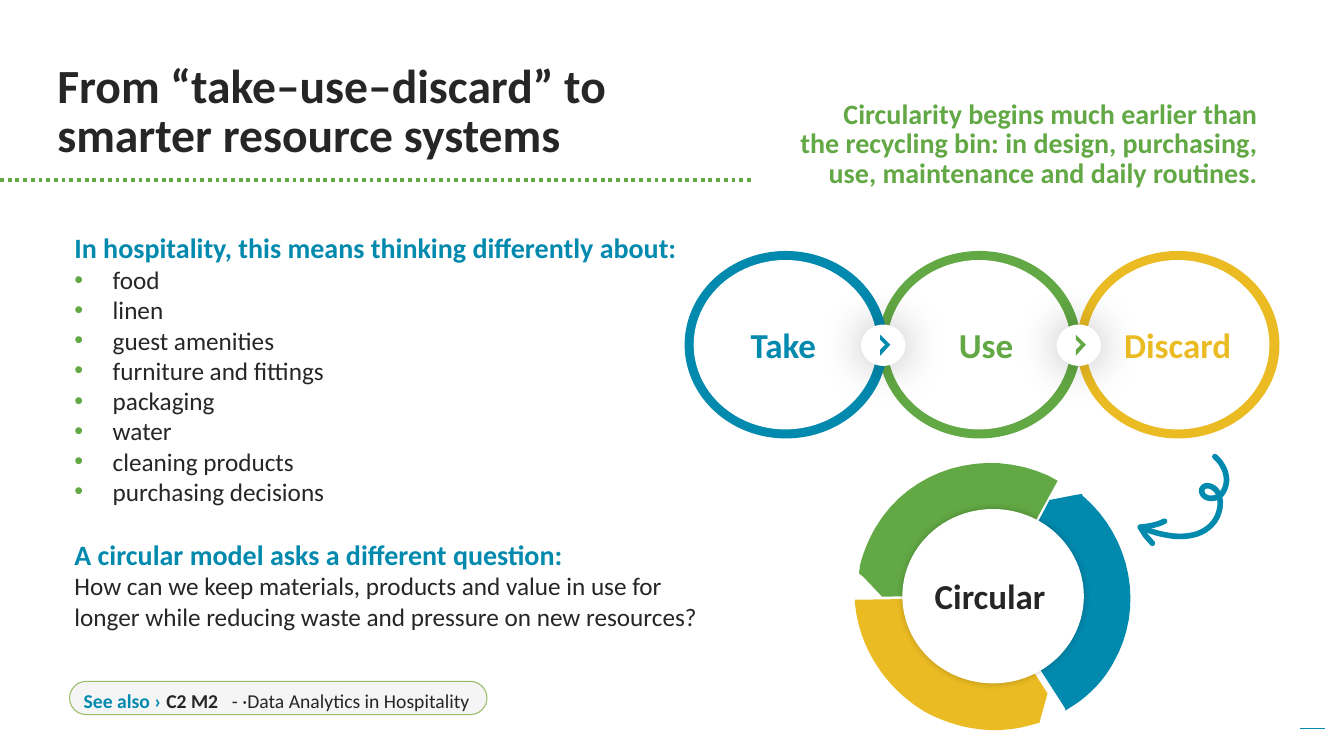
from lxml.etree import SubElement
from pptx import Presentation
from pptx.dml.color import RGBColor
from pptx.enum.dml import MSO_LINE
from pptx.enum.shapes import MSO_CONNECTOR, MSO_SHAPE
from pptx.enum.text import MSO_ANCHOR, PP_ALIGN
from pptx.oxml.ns import qn
from pptx.util import Emu, Inches, Pt

TEAL = RGBColor(0x02, 0x89, 0xAE)
GREEN = RGBColor(0x62, 0xA8, 0x44)
YELLOW = RGBColor(0xEA, 0xBB, 0x22)
INK = RGBColor(0x26, 0x26, 0x26)
WHITE = RGBColor(0xFF, 0xFF, 0xFF)
PALE = RGBColor(0xF5, 0xF5, 0xF5)
SAGE = RGBColor(0x97, 0xBC, 0x62)
SLIDE_W, SLIDE_H = Inches(13.33), Inches(7.5)
COLS, ROWS = 133.3, 75
CELL = SLIDE_H / ROWS
FONT = "Calibri"
TOPICS = ["food", "linen", "guest amenities", "furniture and fittings",
          "packaging", "water", "cleaning products", "purchasing decisions"]

GREEN_ARC = [(19.9, 1.7), (16.6, 7.7), (15.6, 7.2, 14.5, 6.9, 13.3, 6.9),
             (9.8, 6.9, 7, 9.7, 7, 13.1), (2.5, 13.2), (0.6, 11.2),
             (0.2, 10.9), (0.3, 10.1), (0.6, 8.9, 1.1, 7.6, 1.8, 6.4),
             (5.2, 0.5, 12.7, -1.7, 19, 1.2)]
TEAL_ARC = [(22.3, 3), (22.4, 3.2), (27.2, 7.3, 28.6, 14.3, 25.4, 19.8),
            (24.3, 21.8, 22.7, 23.3, 20.8, 24.4), (20.7, 24.5), (20.6, 24.2),
            (17, 18.6), (18.9, 17.5, 20.2, 15.3, 20.1, 12.9),
            (20, 10.7, 18.8, 8.8, 17, 7.6), (19.1, 3.6), (21.7, 3.1)]
YELLOW_ARC = [(6.8, 13.4), (7, 16.8, 10.1, 19.6, 13.6, 19.6),
              (14.6, 19.6, 15.5, 19.3, 16.4, 18.9), (18.9, 22.8),
              (18.2, 25.3), (18.1, 25.7), (17, 26),
              (13.7, 26.9, 10, 26.4, 6.7, 24.6),
              (2.7, 22.2, 0.2, 18.1, -0.2, 13.9), (-0.2, 13.5), (0.1, 13.5)]
CHEVRON = [(0, 0), (1, 1), (0, 2.1), (0, 1.5), (0.5, 1), (0, 0.5)]
CURL = [(7.5, 0.3), (8.8, 1.5, 9, 3, 8.1, 4.1), (7.5, 4.6, 6.4, 4.6, 6.2, 3.8),
        (6.1, 3.2, 6.9, 2.9, 7.6, 3.6), (8.2, 4.3, 8.2, 5.7, 7.4, 6.8),
        (6, 8.6, 3.2, 8.6, 0.1, 7.3)]
CURL_HEAD = [(2.5, 6.7), (1.7, 7.1, 1, 7.2, 0.1, 7.3), (0.6, 8.1), (1.3, 8.9)]


def emu(*cells):
    """Turn grid cells into slide lengths."""
    return [Emu(int(c * CELL)) for c in cells]


def add_para(tf, text, first=False, size=18, color=INK, bold=False,
             align=PP_ALIGN.LEFT, line=None, before=0, bullet=False):
    """Write one formatted paragraph."""
    p = tf.paragraphs[0] if first else tf.add_paragraph()
    p.alignment = align
    if line:
        p.line_spacing = Pt(line)
    if before:
        p.space_before = Pt(before)
    if bullet:
        pPr = p._p.get_or_add_pPr()
        pPr.set("marL", str(Inches(0.38)))
        pPr.set("indent", str(-Inches(0.38)))
        clr = SubElement(SubElement(pPr, qn("a:buClr")), qn("a:srgbClr"))
        clr.set("val", str(GREEN))
        SubElement(pPr, qn("a:buFont")).set("typeface", "Arial")
        SubElement(pPr, qn("a:buChar")).set("char", "•")
    r = p.add_run()
    r.text = text
    r.font.name, r.font.size, r.font.bold = FONT, Pt(size), bold
    r.font.color.rgb = color


def add_text(slide, box, text, tight=False, **fmt):
    """Add a text box; tight ones have no margins and are centred vertically."""
    tf = slide.shapes.add_textbox(*emu(*box)).text_frame
    tf.word_wrap = True
    if tight:
        tf.margin_left = tf.margin_right = tf.margin_top = tf.margin_bottom = 0
        tf.vertical_anchor = MSO_ANCHOR.MIDDLE
    add_para(tf, text, first=True, **fmt)
    return tf


def add_shape(slide, kind, box, fill, glow=None):
    """Add a plain filled shape, with a soft shadow of (opacity, blur) if given."""
    s = slide.shapes.add_shape(kind, *emu(*box))
    s.shadow.inherit = False
    s.fill.solid()
    s.fill.fore_color.rgb = fill
    s.line.fill.background()
    if glow:
        opacity, blur = glow
        effects = s._element.spPr.find(qn("a:effectLst"))
        shadow = SubElement(effects, qn("a:outerShdw"), blurRad=str(Pt(blur)))
        clr = SubElement(shadow, qn("a:srgbClr"), val="000000")
        SubElement(clr, qn("a:alpha"), val=str(opacity * 1000))
    return s


def add_line(slide, start, end, color, width):
    """Add a straight line without a shadow."""
    s = slide.shapes.add_connector(MSO_CONNECTOR.STRAIGHT, *emu(*start, *end))
    s.line.color.rgb, s.line.width = color, Pt(width)
    SubElement(s._element.spPr, qn("a:effectLst"))
    return s


def trace(outline, steps=16):
    """Turn corners and cubic curve segments into a list of points."""
    points = [outline[0]]
    for seg in outline[1:]:
        if len(seg) == 2:
            points.append(seg)
            continue
        nodes = [points[-1], seg[:2], seg[2:4], seg[4:]]
        for t in (i / steps for i in range(1, steps + 1)):
            weights = ((1 - t) ** 3, 3 * t * (1 - t) ** 2, 3 * t * t * (1 - t), t ** 3)
            points.append(tuple(sum(w * n[k] for w, n in zip(weights, nodes))
                                for k in (0, 1)))
    return points


def add_outline(slide, x, y, outline, color, stroke=None):
    """Draw an outline placed from (x, y): filled, or open if stroke is given."""
    pts = [(100 * (x + px), 100 * (y + py)) for px, py in trace(outline)]
    builder = slide.shapes.build_freeform(*pts[0], scale=CELL / 100)
    builder.add_line_segments(pts[1:], close=not stroke)
    s = builder.convert_to_shape()
    s.shadow.inherit = False
    if stroke:
        s.fill.background()
        s.line.color.rgb, s.line.width = color, Pt(stroke)
        s.line._get_or_add_ln().set("cap", "rnd")
        SubElement(s.line._get_or_add_ln(), qn("a:round"))
    else:
        s.fill.solid()
        s.fill.fore_color.rgb = color
        s.line.fill.background()


def add_header(slide, x, y):
    """Place the title, its dotted rule and the statement on the right."""
    add_text(slide, (x + 4.7, y, 69.1, 12.2), size=34, bold=True, line=35.2,
             text="From “take–use–discard” to smarter resource systems")
    rule = add_line(slide, (x, y + 12.1), (x + 74.8, y + 12.1), GREEN, 2.75)
    rule.line.dash_style = MSO_LINE.ROUND_DOT
    s = add_shape(slide, MSO_SHAPE.RECTANGLE, (x + 74.8, y + 3.7, 50.9, 9.8), WHITE)
    tf = s.text_frame
    tf.word_wrap, tf.vertical_anchor = True, MSO_ANCHOR.TOP
    fmt = dict(size=20, color=GREEN, bold=True, align=PP_ALIGN.RIGHT, line=21)
    add_para(tf, "Circularity begins much earlier than", first=True, **fmt)
    add_para(tf, "the recycling bin: in design, purchasing, use, "
             "maintenance and daily routines.", **fmt)


def add_body(slide, box):
    """Place the list of topics and the closing question."""
    head = dict(size=20, color=TEAL, bold=True)
    tf = add_text(slide, box, "In hospitality, this means thinking differently about:", **head)
    for topic in TOPICS:
        add_para(tf, topic, bullet=True)
    add_para(tf, "A circular model asks a different question:", before=22, **head)
    add_para(tf, "How can we keep materials, products and value in use for longer "
             "while reducing waste and pressure on new resources?")


def add_label(slide, x, y, text, color):
    """Place a centred diagram label."""
    add_text(slide, (x, y, 19, 3.7), text, tight=True, size=25, color=color,
             bold=True, align=PP_ALIGN.CENTER, line=25.8)


def add_chain(slide, x, y):
    """Place the three linked rings with chevron badges."""
    rings = [(0, 0.3, "Take", TEAL), (19.2, 20.4, "Use", GREEN),
             (38.9, 39.4, "Discard", YELLOW)]
    for dx, _, _, color in reversed(rings):
        add_shape(slide, MSO_SHAPE.OVAL, (x + dx, y, 20.1, 18.6), color)
        add_shape(slide, MSO_SHAPE.OVAL, (x + dx + 0.9, y + 0.9, 18.2, 16.8), WHITE)
    for dx, color in ((17.5, TEAL), (36.9, GREEN)):
        add_shape(slide, MSO_SHAPE.OVAL, (x + dx, y + 7.3, 4.4, 4.1), WHITE, glow=(29, 32))
        add_outline(slide, x + dx + 1.9, y + 8.3, CHEVRON, color)
    for _, dx, text, color in rings:
        add_label(slide, x + dx, y + 7.7, text, color)


def add_cycle(slide, x, y):
    """Place the circular arrow ring and the curled arrow leading to it."""
    for part in (CURL, CURL_HEAD):
        add_outline(slide, x + 28, y - 1, part, TEAL, stroke=4)
    for arc, color in ((GREEN_ARC, GREEN), (TEAL_ARC, TEAL), (YELLOW_ARC, YELLOW)):
        add_outline(slide, x, y, arc, color)
    add_shape(slide, MSO_SHAPE.OVAL, (x + 4.5, y + 4.5, 18, 17.3), WHITE, glow=(20, 5))
    add_label(slide, x + 3.7, y + 11.5, "Circular", INK)


def add_footer(slide, x, y):
    """Place the reference pill and the corner mark."""
    s = add_shape(slide, MSO_SHAPE.ROUNDED_RECTANGLE, (x, y, 41.4, 3.3), PALE)
    s.adjustments[0] = 0.5
    s.line.color.rgb, s.line.width = SAGE, Pt(0.75)
    for dx, w, text, color, bold in (
            (1.4, 8.3, "See also ›", TEAL, True), (9.6, 6.7, "C2 M2", INK, True),
            (16.1, 38.2, "- ·Data Analytics in Hospitality", INK, False)):
        add_text(slide, (x + dx, y + 0.7, w, 2.4), text, tight=True, size=14,
                 color=color, bold=bold)
    add_line(slide, (COLS - 1.9, y + 4.7), (COLS - 4.4, y + 4.7), TEAL, 0.75)


def main():
    """Build and save the slide."""
    prs = Presentation()
    prs.slide_width, prs.slide_height = SLIDE_W, SLIDE_H
    slide = prs.slides.add_slide(prs.slide_layouts[6])
    add_header(slide, 0, 5.8)
    add_body(slide, (6.4, 22.4, 66, 44.1))
    add_chain(slide, 67.9, 24.9)
    add_cycle(slide, 85, 46)
    add_footer(slide, 6.9, 67.6)
    prs.save("out.pptx")


if __name__ == "__main__":
    main()
